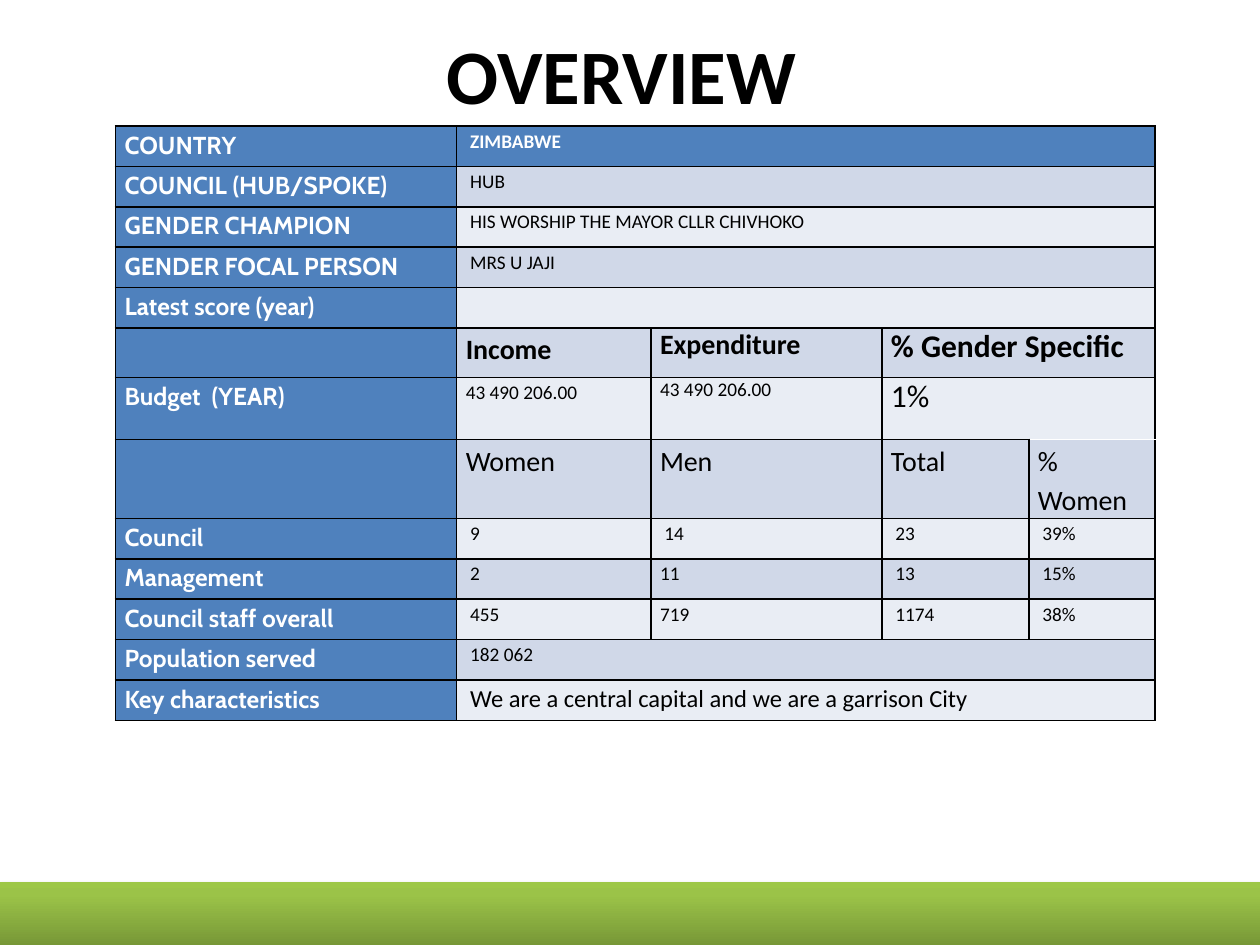
"""Build the council overview slide: a title, a facts table and a green footer band."""
import copy

from lxml import etree
from pptx import Presentation
from pptx.dml.color import RGBColor
from pptx.enum import shapes, text
from pptx.oxml import ns
from pptx.util import Pt

COLORS = {"blue": "4F81BD", "dark_band": "D0D8E8", "light_band": "E9EDF4", "black": "000000",
          "white": "FFFFFF", "green_dark": "779737", "green_mid": "9BC348", "green": "9DC746"}


def add_run(p, content, size, color, bold, font="Calibri"):
    r = p.add_run()
    r.text = content
    r.font.name, r.font.size, r.font.bold = font, Pt(size), bold
    r.font.color.rgb = RGBColor.from_string(COLORS[color])


def add_border(cell, side, color):
    ln = etree.SubElement(cell._tc.get_or_add_tcPr(), ns.qn(f"a:ln{side}"), w=str(Pt(1)))
    fill = etree.SubElement(ln, ns.qn("a:solidFill"))
    etree.SubElement(fill, ns.qn("a:srgbClr"), val=COLORS[color])


prs = Presentation()
prs.slide_width, prs.slide_height = Pt(720), Pt(540)
s = prs.slides.add_slide(prs.slide_layouts[5])

title = s.shapes.title
title.left, title.top, title.width, title.height = Pt(36), Pt(12.2), Pt(648), Pt(60)
title.text_frame.vertical_anchor = text.MSO_ANCHOR.MIDDLE
p = title.text_frame.paragraphs[0]
p.alignment = text.PP_ALIGN.CENTER
add_run(p, "OVERVIEW ", 44, "black", True)

rows = [
    ["COUNTRY", " ZIMBABWE"],
    ["COUNCIL (HUB/SPOKE)", " HUB"],
    ["GENDER CHAMPION", " HIS WORSHIP THE MAYOR CLLR CHIVHOKO"],
    ["GENDER FOCAL PERSON", " MRS U JAJI"],
    ["Latest score (year)", ""],
    ["", "Income", "Expenditure", "% Gender Specific"],
    ["Budget  (YEAR)", "43 490 206.00", "43 490 206.00", "1%"],
    ["", "Women", "Men", "Total", "% Women"],
    ["Council", " 9", " 14", " 23", " 39%"],
    ["Management", " 2", "11", " 13", " 15%"],
    ["Council staff overall", " 455", "719 ", " 1174", " 38%"],
    ["Population served", " 182 062"],
    ["Key characteristics", " ", ],
]
closing_text = "We are a central capital and we are a garrison City"
col_widths = [195, 111, 132, 84, 72]
row_heights = {5: 28.4, 6: 35.4, 7: 45.1}
row_sizes = {5: [16, 16, 18], 6: [11, 11, 18], 7: [16] * 4}
budget_rows, women_row = (5, 6), 7

table = s.shapes.add_table(len(rows), 5, Pt(66), Pt(72), Pt(594), Pt(340)).table
table.horz_banding = False
for col, width in zip(table.columns, col_widths):
    col.width = Pt(width)

for i, values in enumerate(rows):
    table.rows[i].height = Pt(row_heights.get(i, 23.1))
    if len(values) < 5:
        table.cell(i, len(values) - 1).merge(table.cell(i, 4))
    for j in range(5):
        cell = table.cell(i, j)
        cell.margin_left = cell.margin_right = Pt(5.2)
        cell.margin_top = cell.margin_bottom = 0
        for side in "LRTB":
            white_edge = j == 4 and (i, side) in [(women_row - 1, "B"), (women_row, "T")]
            add_border(cell, side, "white" if white_edge else "black")
        is_blue = j == 0 or i == 0
        fill = "blue" if is_blue else "dark_band" if i % 2 else "light_band"
        cell.fill.solid()
        cell.fill.fore_color.rgb = RGBColor.from_string(COLORS[fill])
        p = cell.text_frame.paragraphs[0]
        p.font.size = Pt(11)
        if j >= len(values) or not values[j]:
            continue
        if not (i in budget_rows and j > 1):
            p.line_spacing = 1.15
        size = 14 if j == 0 else row_sizes.get(i, [11] * 4)[j - 1]
        add_run(p, values[j], size, "white" if is_blue else "black",
                is_blue or i == 5, "Calibri" if j else "Cabin")
add_run(table.cell(len(rows) - 1, 1).text_frame.paragraphs[0], closing_text, 14, "black", False)

band = s.shapes.add_shape(shapes.MSO_SHAPE.RECTANGLE, 0, Pt(504), Pt(735), Pt(36.5))
band.line.fill.background()
band.fill.gradient()
band.fill.gradient_angle = 90
stop_list = band._element.spPr.find(".//" + ns.qn("a:gsLst"))
stop_list.append(copy.deepcopy(stop_list[-1]))
stops = [(0, "green_dark"), (0.8, "green_mid"), (1, "green")]
for stop, (position, color) in zip(band.fill.gradient_stops, stops):
    stop.position = position
    stop.color.rgb = RGBColor.from_string(COLORS[color])
band.shadow.inherit = False
effects = band._element.spPr.find(ns.qn("a:effectLst"))
shadow = etree.SubElement(effects, ns.qn("a:outerShdw"), blurRad=str(Pt(3.1)),
                          dist=str(Pt(1.8)), dir="5400000", rotWithShape="0")
shade = etree.SubElement(shadow, ns.qn("a:srgbClr"), val=COLORS["black"])
etree.SubElement(shade, ns.qn("a:alpha"), val="35000")

prs.save("out.pptx")
